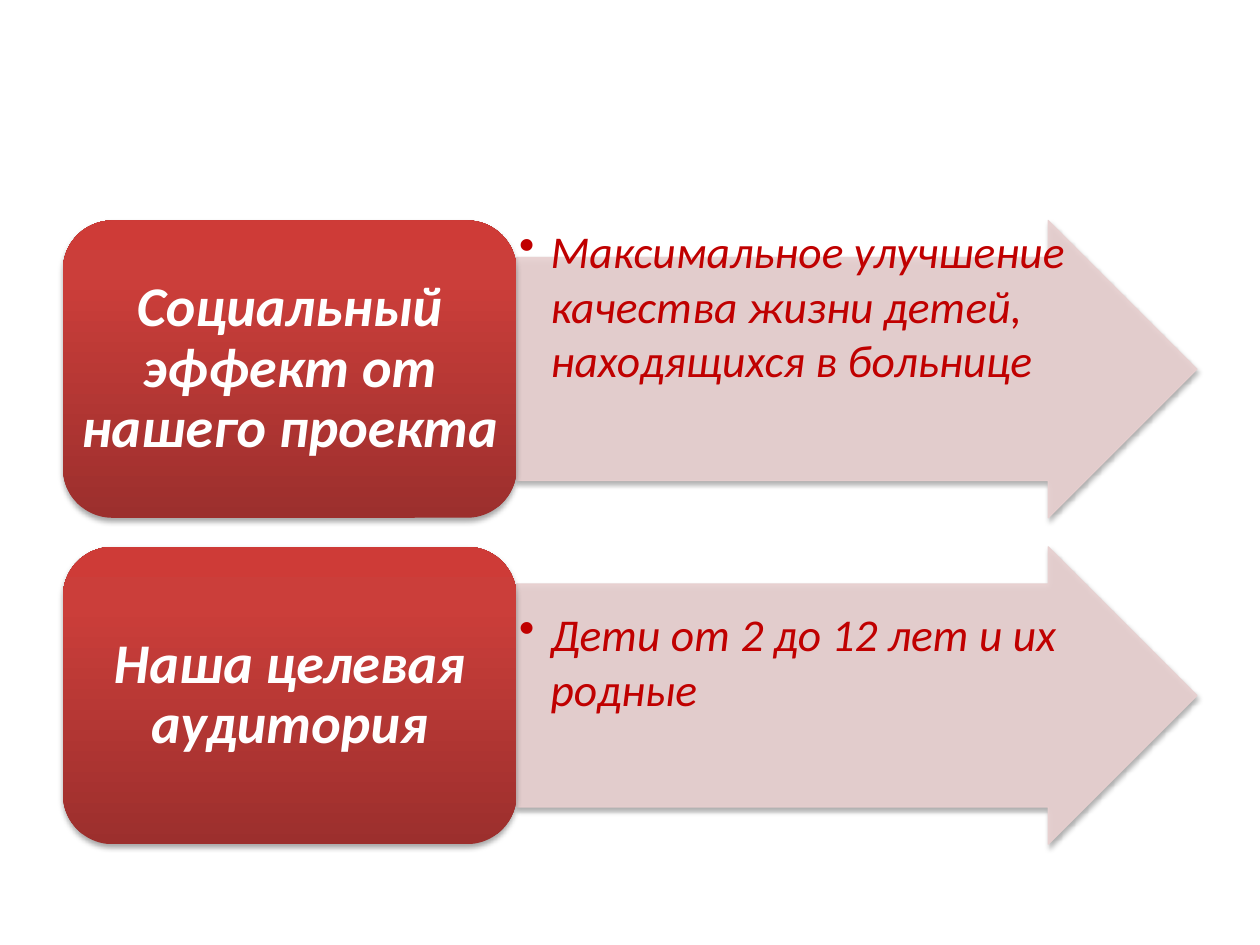
from dataclasses import dataclass

from lxml import etree
from pptx import Presentation
from pptx.dml.color import RGBColor
from pptx.enum.shapes import MSO_SHAPE
from pptx.enum.text import MSO_ANCHOR, PP_ALIGN
from pptx.oxml import parse_xml
from pptx.oxml.ns import nsdecls, qn
from pptx.slide import Slide
from pptx.util import Inches, Pt

ARROW, ROUNDED = MSO_SHAPE.RIGHT_ARROW, MSO_SHAPE.ROUNDED_RECTANGLE
MIDDLE, TOP = MSO_ANCHOR.MIDDLE, MSO_ANCHOR.TOP
CENTER = PP_ALIGN.CENTER
BLANK_LAYOUT = 6


@dataclass(frozen=True)
class Theme:
    font: str = "Calibri"
    heading_size: int = 32
    detail_size: int = 26
    heading_color: str = "FFFFFF"
    detail_color: str = "C00000"
    arrow_color: str = "E8D0D0"
    arrow_opacity: int = 90
    card_stops: tuple = ((0, "9C2F2D"), (80, "CB3E3A"), (100, "CE3B37"))


@dataclass(frozen=True)
class Topic:
    heading: str
    detail: str
    detail_inset: float


THEME = Theme()
LEFT, FIRST_TOP = 0.5, 1.75
CARD_WIDTH, ARROW_WIDTH = 3.6, 5.4
ROW_HEIGHT, ROW_PITCH = 2.36, 2.59
ARROW_LEFT = LEFT + CARD_WIDTH
TEXT_INSET = 0.02

TOPICS = [
    Topic("Социальный эффект от нашего проекта",
          "Максимальное улучшение качества жизни детей, находящихся в больнице", 0.02),
    Topic("Наша целевая аудитория", "Дети от 2 до 12 лет и их родные", 0.47),
]


def add_soft_shadow(shape) -> None:
    shape.shadow.inherit = False
    effects = shape._element.spPr.find(qn("a:effectLst"))
    effects.append(parse_xml(
        f'<a:outerShdw {nsdecls("a")} blurRad="{Pt(3.1)}" dist="{Pt(1.8)}" '
        'dir="5400000" rotWithShape="0"><a:srgbClr val="000000">'
        '<a:alpha val="35000"/></a:srgbClr></a:outerShdw>'))


def set_opacity(shape, percent: int) -> None:
    """Apply one opacity to both the fill and the outline."""
    for color in shape._element.spPr.iter(qn("a:srgbClr")):
        etree.SubElement(color, qn("a:alpha"), val=str(percent * 1000))


def fill_card(shape) -> None:
    """Fill with the theme's three-stop gradient, running upwards."""
    stops = "".join(
        f'<a:gs pos="{position * 1000}"><a:srgbClr val="{color}"/></a:gs>'
        for position, color in THEME.card_stops)
    shape._element.spPr.find(qn("a:prstGeom")).addnext(parse_xml(
        f'<a:gradFill {nsdecls("a")} rotWithShape="1"><a:gsLst>{stops}</a:gsLst>'
        '<a:lin ang="16200000" scaled="0"/></a:gradFill>'))


def add_arrow(slide: Slide, top: float) -> None:
    arrow = slide.shapes.add_shape(ARROW, Inches(ARROW_LEFT), Inches(top),
                                   Inches(ARROW_WIDTH), Inches(ROW_HEIGHT))
    arrow.adjustments[0], arrow.adjustments[1] = 0.75, 0.5
    color = RGBColor.from_string(THEME.arrow_color)
    arrow.fill.solid()
    arrow.fill.fore_color.rgb = color
    arrow.line.color.rgb = color
    arrow.line.width = Pt(0.75)
    set_opacity(arrow, THEME.arrow_opacity)
    add_soft_shadow(arrow)


def add_detail(slide: Slide, topic: Topic, top: float) -> None:
    detail = slide.shapes.add_textbox(Inches(ARROW_LEFT), Inches(top),
                                      Inches(ARROW_WIDTH), Inches(ROW_HEIGHT))
    frame = detail.text_frame
    frame.word_wrap = True
    frame.vertical_anchor = TOP
    frame.margin_left = frame.margin_right = frame.margin_bottom = Inches(TEXT_INSET)
    frame.margin_top = Inches(topic.detail_inset)
    paragraph = frame.paragraphs[0]
    paragraph.text = topic.detail
    properties = paragraph._p.get_or_add_pPr()
    properties.set("marL", str(Inches(0.25)))
    properties.set("indent", str(-Inches(0.25)))
    etree.SubElement(properties, qn("a:buChar"), char="•")
    style_text(paragraph, THEME.detail_size, THEME.detail_color)


def add_card(slide: Slide, heading: str, top: float) -> None:
    card = slide.shapes.add_shape(ROUNDED, Inches(LEFT), Inches(top),
                                  Inches(CARD_WIDTH), Inches(ROW_HEIGHT))
    fill_card(card)
    card.line.fill.background()
    add_soft_shadow(card)
    frame = card.text_frame
    frame.word_wrap = True
    frame.vertical_anchor = MIDDLE
    frame.margin_left = frame.margin_right = Inches(0.01)
    frame.margin_top = frame.margin_bottom = 0
    paragraph = frame.paragraphs[0]
    paragraph.text = heading
    paragraph.alignment = CENTER
    paragraph.line_spacing = 0.9
    style_text(paragraph, THEME.heading_size, THEME.heading_color, bold=True)


def style_text(paragraph, size: int, color: str, bold: bool = False) -> None:
    font = paragraph.font
    font.name, font.size = THEME.font, Pt(size)
    font.bold, font.italic = bold, True
    font.color.rgb = RGBColor.from_string(color)


def main() -> None:
    presentation = Presentation()
    presentation.slide_width, presentation.slide_height = Inches(10), Inches(7.5)
    slide = presentation.slides.add_slide(presentation.slide_layouts[BLANK_LAYOUT])
    for row, topic in enumerate(TOPICS):
        top = FIRST_TOP + row * ROW_PITCH
        add_arrow(slide, top)
        add_detail(slide, topic, top)
        add_card(slide, topic.heading, top)
    presentation.save("out.pptx")


if __name__ == "__main__":
    main()
